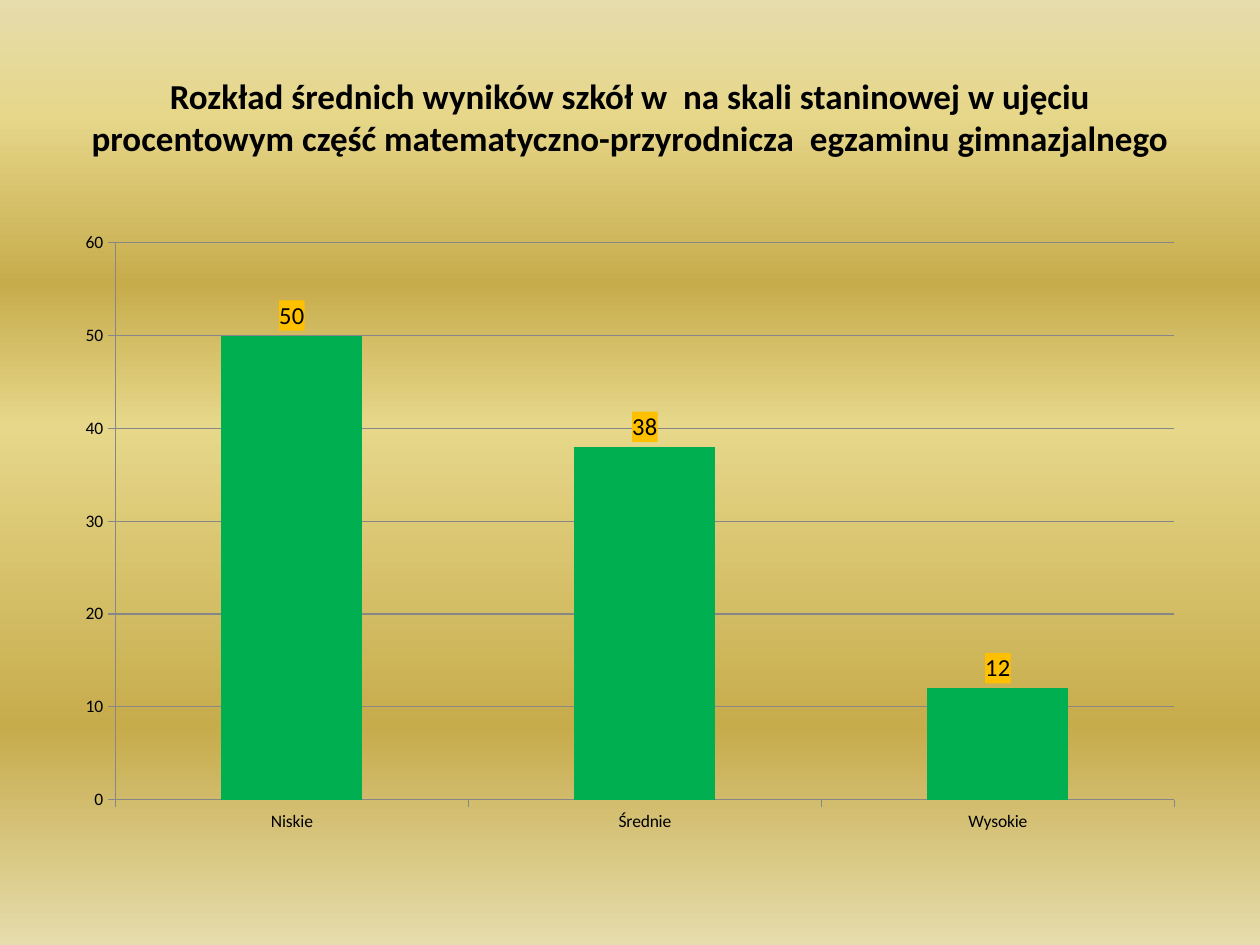
from dataclasses import dataclass

from lxml.etree import SubElement
from pptx import Presentation
from pptx.chart.data import CategoryChartData
from pptx.dml.color import RGBColor
from pptx.enum.chart import XL_CHART_TYPE, XL_LABEL_POSITION, XL_TICK_MARK
from pptx.enum.text import MSO_ANCHOR, PP_ALIGN
from pptx.oxml import parse_xml
from pptx.oxml.ns import nsdecls, qn
from pptx.util import Inches, Pt


@dataclass(frozen=True)
class Theme:
    font: str = "Calibri"
    ink: str = "000000"
    bars: str = "00B050"
    label_fill: str = "FFC000"
    gridline: str = "878787"
    title_size: int = 20
    axis_size: int = 10
    label_size: int = 14
    # Position in percent and colour, from top to bottom
    backdrop: tuple = ((0, "E6DCAC"), (12, "E6D78A"), (30, "C7AC4C"),
                       (45, "E6D78A"), (77, "C7AC4C"), (100, "E6DCAC"))


THEME = Theme()
WIDTH, HEIGHT = Inches(10), Inches(7.5)


def share_box(left, top, width, height):
    """Turn shares of the slide's size into lengths."""
    return (int(left * WIDTH), int(top * HEIGHT),
            int(width * WIDTH), int(height * HEIGHT))


def style_font(font, size, bold=False):
    font.name = THEME.font
    font.size = Pt(size)
    font.bold = bold
    font.color.rgb = RGBColor.from_string(THEME.ink)


def write_text(frame, text, *, size, bold=False, align=PP_ALIGN.CENTER,
               anchor=MSO_ANCHOR.MIDDLE):
    frame.word_wrap = True
    frame.vertical_anchor = anchor
    paragraph = frame.paragraphs[0]
    paragraph.alignment = align
    run = paragraph.add_run()
    run.text = text
    style_font(run.font, size, bold)


def paint_background(slide):
    fill = slide.background.fill
    fill.gradient()
    fill.gradient_angle = 270
    stops = next(slide.element.iter(qn("a:gsLst")))
    for stop in list(stops):
        stops.remove(stop)
    for percent, color in THEME.backdrop:
        stop = SubElement(stops, qn("a:gs"), pos=str(percent * 1000))
        SubElement(stop, qn("a:srgbClr"), val=color)


def place_title(slide, box, text):
    title = slide.shapes.title
    title.left, title.top, title.width, title.height = box
    write_text(title.text_frame, text, size=THEME.title_size, bold=True)


def style_axis(axis):
    axis.major_tick_mark = XL_TICK_MARK.OUTSIDE
    axis.minor_tick_mark = XL_TICK_MARK.NONE
    axis.format.line.color.rgb = RGBColor.from_string(THEME.gridline)
    axis.format.line.width = Pt(0.75)


def place_results_chart(slide, box, results):
    data = CategoryChartData()
    data.categories = list(results)
    data.add_series("Series 1", list(results.values()))
    chart = slide.shapes.add_chart(
        XL_CHART_TYPE.COLUMN_CLUSTERED, *box, data).chart
    chart.has_title = False
    chart.has_legend = False
    style_font(chart.font, THEME.axis_size)

    # Axes and gridlines
    style_axis(chart.category_axis)
    scale = chart.value_axis
    style_axis(scale)
    scale.minimum_scale, scale.maximum_scale, scale.major_unit = 0, 60, 10
    scale.has_major_gridlines = True
    gridline = scale.major_gridlines.format.line
    gridline.color.rgb = RGBColor.from_string(THEME.gridline)
    gridline.width = Pt(0.75)

    # Columns
    plot = chart.plots[0]
    plot.vary_by_categories = False
    plot.gap_width = 150
    columns = plot.series[0]
    columns.format.fill.solid()
    columns.format.fill.fore_color.rgb = RGBColor.from_string(THEME.bars)

    # Value labels on a filled ground
    labels = columns.data_labels
    labels.show_value = True
    labels.position = XL_LABEL_POSITION.OUTSIDE_END
    style_font(labels.font, THEME.label_size)
    ground = parse_xml(
        f'<c:spPr {nsdecls("c", "a")}><a:solidFill>'
        f'<a:srgbClr val="{THEME.label_fill}"/></a:solidFill></c:spPr>')
    next(chart.element.iter(qn("c:dLbls"))).find(
        qn("c:txPr")).addprevious(ground)


def main():
    deck = Presentation()
    deck.slide_width, deck.slide_height = WIDTH, HEIGHT
    slide = deck.slides.add_slide(deck.slide_layouts[5])
    paint_background(slide)
    place_title(
        slide, share_box(0.05, 0.04, 0.9, 1 / 6),
        "Rozkład średnich wyników szkół w  na skali staninowej w ujęciu "
        "procentowym część matematyczno-przyrodnicza  egzaminu "
        "gimnazjalnego")
    place_results_chart(slide, share_box(0.05, 7 / 30, 0.9, 0.66),
                        {"Niskie": 50, "Średnie": 38, "Wysokie": 12})
    deck.save("out.pptx")


if __name__ == "__main__":
    main()
